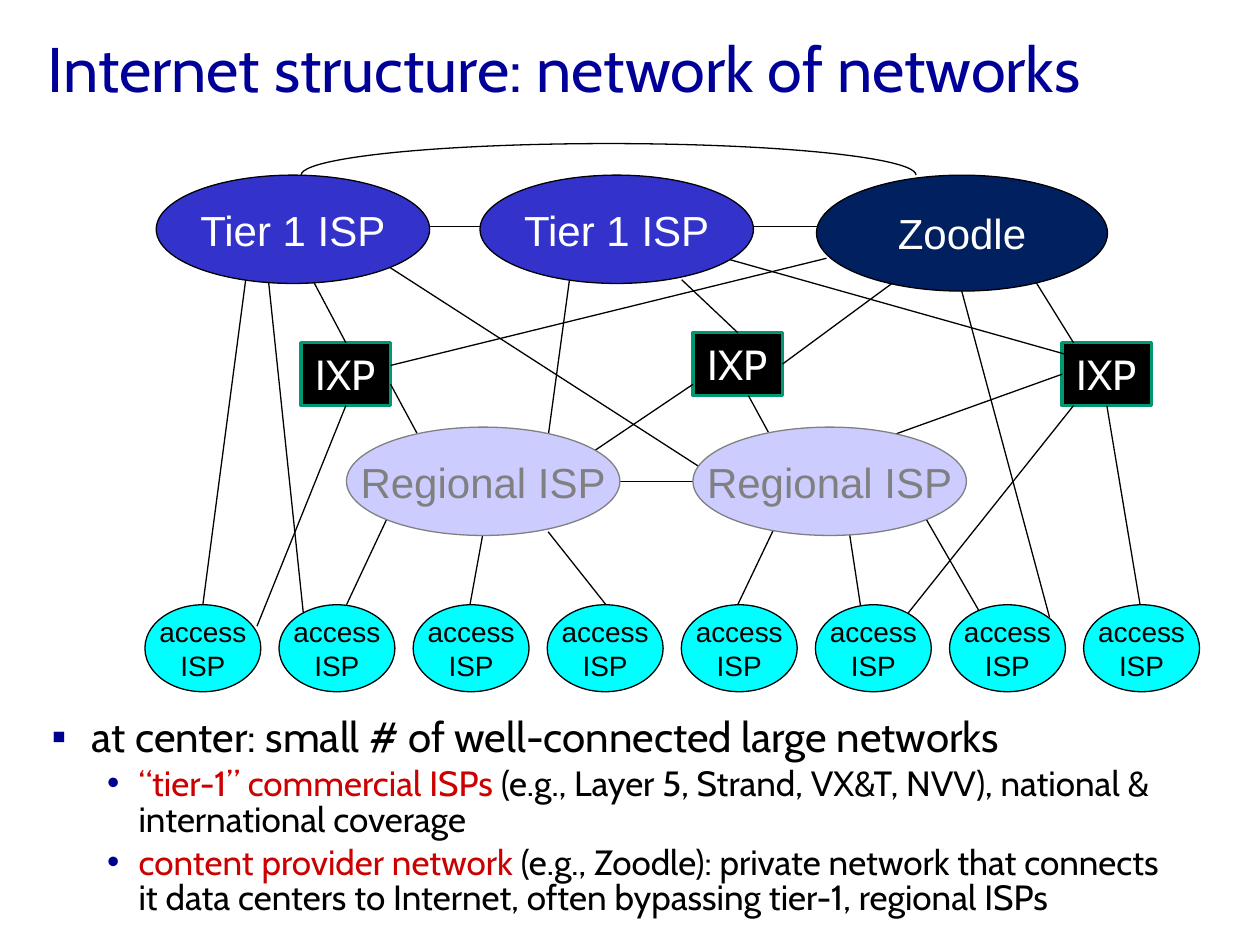
import dataclasses

import pptx
import pptx.dml.color
import pptx.enum.shapes
import pptx.enum.text
import pptx.oxml.ns
import pptx.util
from lxml import etree

Inches = pptx.util.Inches
Pt = pptx.util.Pt
MSO_SHAPE = pptx.enum.shapes.MSO_SHAPE
PP_ALIGN = pptx.enum.text.PP_ALIGN
ANCHOR = pptx.enum.text.MSO_ANCHOR
AUTO_SIZE = pptx.enum.text.MSO_AUTO_SIZE
qn = pptx.oxml.ns.qn


@dataclasses.dataclass(frozen=True)
class Theme:
    heading_font: str = "Cabin"
    node_font: str = "Arial"
    title: str = "000099"
    bullet: str = "000090"
    key_term: str = "CC0000"
    ink: str = "000000"
    light: str = "FFFFFF"
    tier1: str = "3333CC"
    content: str = "002060"
    regional: str = "CCCCFF"
    muted: str = "808080"
    access: str = "00FFFF"
    ixp_edge: str = "009771"
    title_size: float = 36
    large_size: float = 24
    detail_size: float = 20
    small_size: float = 16
    thin: float = 0.75
    thick: float = 2


THEME = Theme()
EXCHANGES = {"west": (1.39, 1.72), "middle": (4.5, 1.64), "east": (7.43, 1.72)}

# Link ends are points in the diagram, or an exchange and its side
# (0 top, 1 left, 2 bottom, 3 right).
LINKS = [
    # Between neighbours of the same tier
    ((2.37, 0.8), (2.95, 0.8)), ((4.94, 0.8), (5.52, 0.8)),
    ((3.92, 2.82), (4.5, 2.82)),
    # From the top tier downwards
    ((0.95, 1.22), (0.61, 3.8)), ((1.13, 1.22), (1.41, 3.89)),
    ((1.48, 1.22), ("west", 0)), ((2.09, 1.12), (4.59, 2.73)),
    ((3.52, 1.22), (3.35, 2.47)), ((4.41, 1.22), ("middle", 0)),
    ((4.79, 1.06), (7.45, 1.81)), ((5.56, 1.05), (2.1, 1.9)),
    ((6.12, 1.22), ("middle", 3)), ((6.63, 1.3), (7.33, 3.9)),
    ((7.16, 1.14), (7.52, 1.72)),
    # From the exchanges downwards
    (("west", 2), (1.04, 3.97)), ((2.1, 2.05), (2.37, 2.55)),
    ((4.5, 2.05), (3.61, 2.65)), ((4.94, 2.14), (5.12, 2.47)),
    (("east", 1), (6.01, 2.48)), ((7.52, 2.22), (6.18, 3.9)),
    (("east", 2), (8.05, 3.81)),
    # From the regional networks to the access networks
    ((2.07, 3.12), (1.75, 3.8)), ((2.83, 3.25), (2.73, 3.8)),
    ((3.35, 3.22), (3.81, 3.8)), ((5.17, 3.14), (4.85, 3.81)),
    ((5.74, 3.22), (5.83, 3.81)), ((6.35, 3.12), (6.8, 3.9)),
]

BULLETS = [
    (0, [("at center: small # of well-connected large networks", THEME.ink)]),
    (1, [("“tier-1” commercial ISPs ", THEME.key_term),
         ("(e.g., Layer 5, Strand, VX&T, NVV), national & "
          "international coverage", THEME.ink)]),
    (1, [("content provider network ", THEME.key_term),
         ("(e.g., Zoodle): private network that connects it data centers "
          "to Internet, often bypassing tier-1, regional ISPs", THEME.ink)]),
]
LEVELS = [
    {"char": "▪", "margin": 0.38, "indent": -0.32, "size": THEME.large_size},
    {"char": "•", "margin": 0.75, "indent": -0.25, "size": THEME.detail_size},
]


def rgb(value):
    return pptx.dml.color.RGBColor.from_string(value)


def assign(target, values):
    for name, value in values.items():
        setattr(target, name, value)


def style_font(font, name, size, color):
    assign(font, {"name": name, "size": Pt(size)})
    font.color.rgb = rgb(color)


def place(shape, box):
    names = ("left", "top", "width", "height")
    assign(shape, {n: Inches(v) for n, v in zip(names, box)})


def add_node(slide, kind, box, label, fill, edge, color,
             font=THEME.node_font, size=THEME.large_size, weight=THEME.thin):
    node = slide.shapes.add_shape(kind, *(Inches(v) for v in box))
    node.shadow.inherit = False
    node.fill.solid()
    node.fill.fore_color.rgb = rgb(fill)
    node.line.color.rgb = rgb(edge)
    node.line.width = Pt(weight)
    frame = node.text_frame
    assign(frame, {"text": label, "word_wrap": False,
                   "vertical_anchor": ANCHOR.MIDDLE})
    for line in frame.paragraphs:
        line.alignment = PP_ALIGN.CENTER
        style_font(line.font, font, size, color)
    return node


def add_link(slide, left, top, ends, exchanges):
    points = [(0, 0) if isinstance(end[0], str) else end for end in ends]
    link = slide.shapes.add_connector(
        pptx.enum.shapes.MSO_CONNECTOR.STRAIGHT,
        *(Inches(v) for x, y in points for v in (left + x, top + y)))
    for end, join in zip(ends, (link.begin_connect, link.end_connect)):
        if isinstance(end[0], str):
            join(exchanges[end[0]], end[1])
    link.line.color.rgb = rgb(THEME.ink)
    link.line.width = Pt(THEME.thin)
    etree.SubElement(link._element.spPr, qn("a:effectLst"))


def add_title(slide, box):
    title = slide.shapes.title
    place(title, box)
    assign(title.text_frame, {
        "text": "Internet structure: network of networks", "word_wrap": True,
        "auto_size": AUTO_SIZE.NONE, "vertical_anchor": ANCHOR.MIDDLE})
    heading = title.text_frame.paragraphs[0]
    heading.alignment = PP_ALIGN.LEFT
    style_font(heading.font, THEME.heading_font, THEME.title_size, THEME.title)


def add_diagram(slide, box):
    left, top = box[:2]

    def at(x, y, width, height):
        return left + x, top + y, width, height

    # Exchange points
    exchanges = {
        name: add_node(slide, MSO_SHAPE.RECTANGLE, at(x, y, 0.71, 0.5), "IXP",
                       THEME.ink, THEME.ixp_edge, THEME.light,
                       font=THEME.heading_font, weight=THEME.thick)
        for name, (x, y) in EXCHANGES.items()}

    # Links, and the arc over the top tier
    for ends in LINKS:
        add_link(slide, left, top, ends, exchanges)
    arc = slide.shapes.add_shape(
        MSO_SHAPE.ARC, *(Inches(v) for v in at(1.39, 0.14, 4.88, 0.5)))
    arc.adjustments[0], arc.adjustments[1] = 106.82, 0
    arc.shadow.inherit = False
    arc.fill.background()
    arc.line.color.rgb = rgb(THEME.ink)
    arc.line.width = Pt(THEME.thin)

    # Top tier, regional and access networks
    for x in (0.24, 2.81):
        add_node(slide, MSO_SHAPE.OVAL, at(x, 0.39, 2.17, 0.86), "Tier 1 ISP",
                 THEME.tier1, THEME.ink, THEME.light)
    add_node(slide, MSO_SHAPE.OVAL, at(5.48, 0.39, 2.31, 0.92), "Zoodle",
             THEME.content, THEME.ink, THEME.light)
    for x in (1.75, 4.5):
        add_node(slide, MSO_SHAPE.OVAL, at(x, 2.39, 2.17, 0.86),
                 "Regional ISP", THEME.regional, THEME.muted, THEME.muted)
    access_count, first_x, last_x = 8, 0.15, 7.6
    step = (last_x - first_x) / (access_count - 1)
    for i in range(access_count):
        add_node(slide, MSO_SHAPE.OVAL, at(first_x + i * step, 3.8, 0.92, 0.69),
                 "access\nISP", THEME.access, THEME.ink, THEME.ink,
                 size=THEME.small_size)


def add_bullets(slide, box):
    body = slide.placeholders[1]
    place(body, box)
    frame = body.text_frame
    assign(frame, {"word_wrap": True, "auto_size": AUTO_SIZE.NONE,
                   "vertical_anchor": ANCHOR.TOP})
    for i, (level, runs) in enumerate(BULLETS):
        point = frame.add_paragraph() if i else frame.paragraphs[0]
        look = LEVELS[level]
        assign(point, {"level": level, "line_spacing": 0.85})
        if i == 0:
            point.space_before = Pt(0)
        props = point._p.get_or_add_pPr()
        props.set("marL", str(Inches(look["margin"])))
        props.set("indent", str(Inches(look["indent"])))
        tint = etree.SubElement(props, qn("a:buClr"))
        etree.SubElement(tint, qn("a:srgbClr"), val=THEME.bullet)
        etree.SubElement(props, qn("a:buChar"), char=look["char"])
        for words, color in runs:
            run = point.add_run()
            run.text = words
            style_font(run.font, THEME.heading_font, look["size"], color)


def main():
    deck = pptx.Presentation()
    assign(deck, {"slide_width": Inches(10), "slide_height": Inches(7.5)})
    slide = deck.slides.add_slide(deck.slide_layouts[1])
    add_title(slide, (0.28, 0.18, 8.85, 0.71))
    add_bullets(slide, (0.25, 5.65, 9.23, 2))
    add_diagram(slide, (1, 1, 8.52, 4.49))
    deck.save("out.pptx")


if __name__ == "__main__":
    main()
